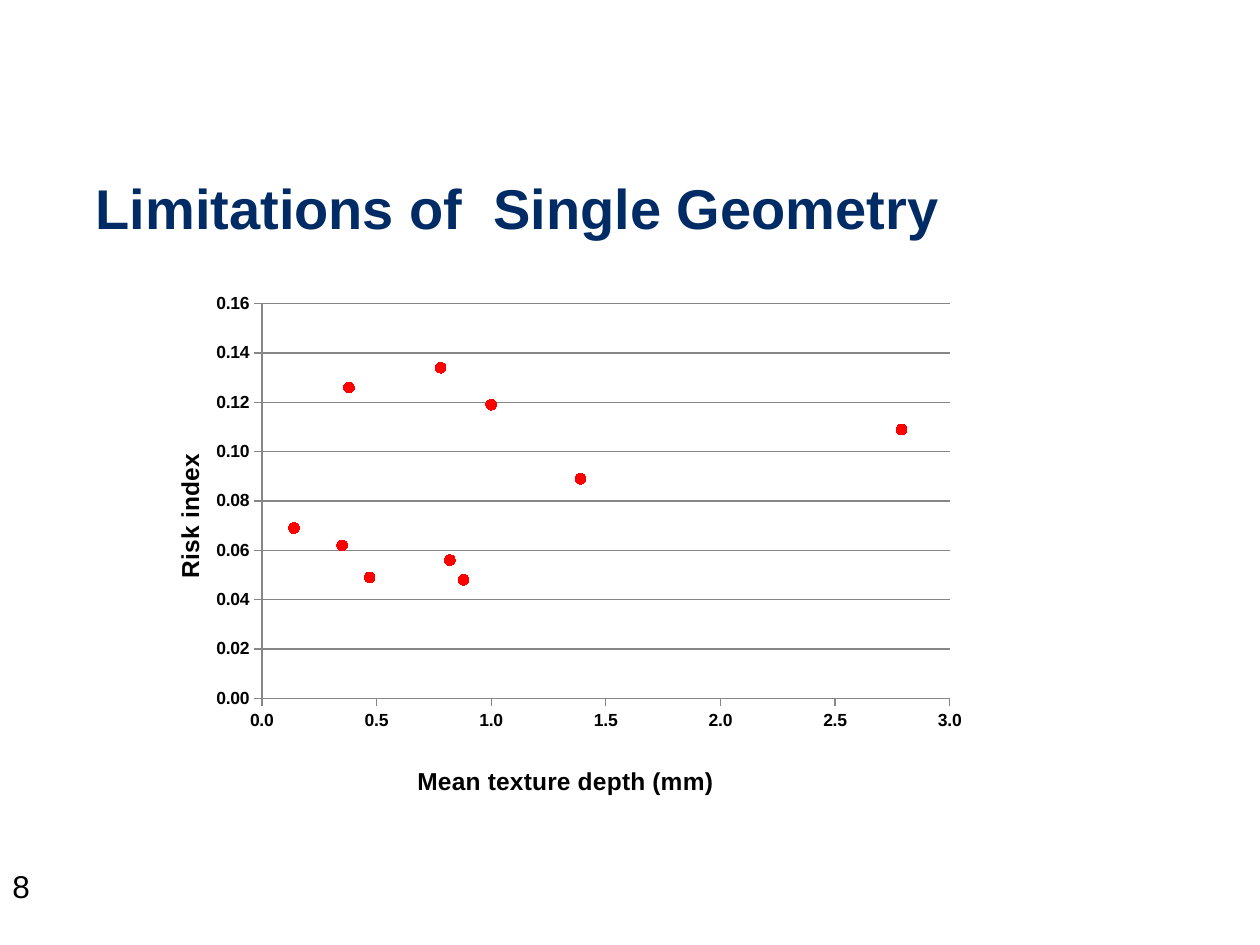
from pptx import Presentation
from pptx.chart.data import XyChartData
from pptx.dml.color import RGBColor
from pptx.enum.chart import XL_CHART_TYPE as Kind, XL_LEGEND_POSITION
from pptx.enum.chart import XL_MARKER_STYLE as Mark, XL_TICK_MARK as Tick
from pptx.enum.text import MSO_ANCHOR as Anchor, PP_ALIGN as Align
from pptx.oxml import parse_xml
from pptx.oxml.ns import nsdecls
from pptx.util import Pt

PX = 914400 // 126


def style(font, size, color, bold=False):
    font.name, font.size, font.bold = "Arial", Pt(size), bold
    font.color.rgb = RGBColor.from_string(color)


def layout(x, y, w=None, h=None):
    """Manual chart layout in fractions of the chart's size."""
    tags = [("xMode", "edge"), ("yMode", "edge"), ("x", x), ("y", y)]
    if w:
        tags = [("layoutTarget", "inner")] + tags + [("w", w), ("h", h)]
    body = "".join(f'<c:{tag} val="{val}"/>' for tag, val in tags)
    return parse_xml(f'<c:layout {nsdecls("c")}><c:manualLayout>{body}'
                     '</c:manualLayout></c:layout>')


prs = Presentation()
prs.slide_width, prs.slide_height = 1260 * PX, 945 * PX
slide = prs.slides.add_slide(prs.slide_layouts[5])

# Title
title = slide.shapes.title
title.left, title.top, title.width, title.height = [
    n * PX for n in (83, 175, 882, 116)]
frame = title.text_frame
frame.text = "Limitations of  Single Geometry"
frame.vertical_anchor = Anchor.TOP
head = frame.paragraphs[0]
head.alignment, head.line_spacing = Align.LEFT, 0.9
style(head.runs[0].font, 32, "002B65", True)

# Page number
page = slide.shapes.add_textbox(0, 861 * PX, 399 * PX, 63 * PX).text_frame
page.word_wrap = True
page.text = "8"
style(page.paragraphs[0].runs[0].font, 18, "000000")

# Scatter chart
data = XyChartData()
risk = data.add_series("Series 1")
for depth, index in [
    (0.78, 0.134), (0.38, 0.126), (1, 0.119), (2.79, 0.109), (1.39, 0.089),
    (0.14, 0.069), (0.35, 0.062), (0.82, 0.056), (0.47, 0.049), (0.88, 0.048),
]:
    risk.add_data_point(depth, index)
chart = slide.shapes.add_chart(
    Kind.XY_SCATTER, 136 * PX, 283 * PX, 839 * PX, 520 * PX, data).chart
chart.has_legend = chart.has_title = False
style(chart.font, 10, "000000")
area = chart._chartSpace.chart.plotArea
for old in area.findall("{*}layout"):
    area.remove(old)
area.insert(0, layout(0.15, 0.04, 0.82, 0.76))

# Red dots without a line
plot = chart.plots[0]
plot.vary_by_categories = False
dots = plot.series[0]
dots.smooth = False
dots.format.line.fill.background()
dots.marker.style, dots.marker.size = Mark.CIRCLE, 6
red = RGBColor.from_string("FF0000")
for paint in (dots.marker.format.fill, dots.marker.format.line.fill):
    paint.solid()
    paint.fore_color.rgb = red

# Axes
gray = RGBColor.from_string("868686")
for axis, name, top, step, form, x, y in [
    (chart.category_axis, "Mean texture depth (mm)", 3, 0.5, "0.0", 0.33, 0.92),
    (chart.value_axis, "Risk index", 0.16, 0.02, "0.00", 0.04, 0.32),
]:
    axis.minimum_scale, axis.maximum_scale, axis.major_unit = 0, top, step
    axis.major_tick_mark, axis.minor_tick_mark = Tick.OUTSIDE, Tick.NONE
    axis.format.line.color.rgb = gray
    axis.format.line.width = Pt(0.75)
    labels = axis.tick_labels
    labels.number_format, labels.number_format_is_linked = form, False
    style(labels.font, 10, "000000", True)
    text = axis.axis_title.text_frame
    text.text = name
    style(text.paragraphs[0].runs[0].font, 14, "000000", True)
    node = axis.axis_title._element
    for old in node.findall("{*}layout"):
        node.remove(old)
    node.find("{*}tx").addnext(layout(x, y))

# Horizontal grid only
chart.category_axis.has_major_gridlines = False
chart.value_axis.has_major_gridlines = True
grid = chart.value_axis.major_gridlines.format.line
grid.color.rgb, grid.width = gray, Pt(0.75)

prs.save("out.pptx")
